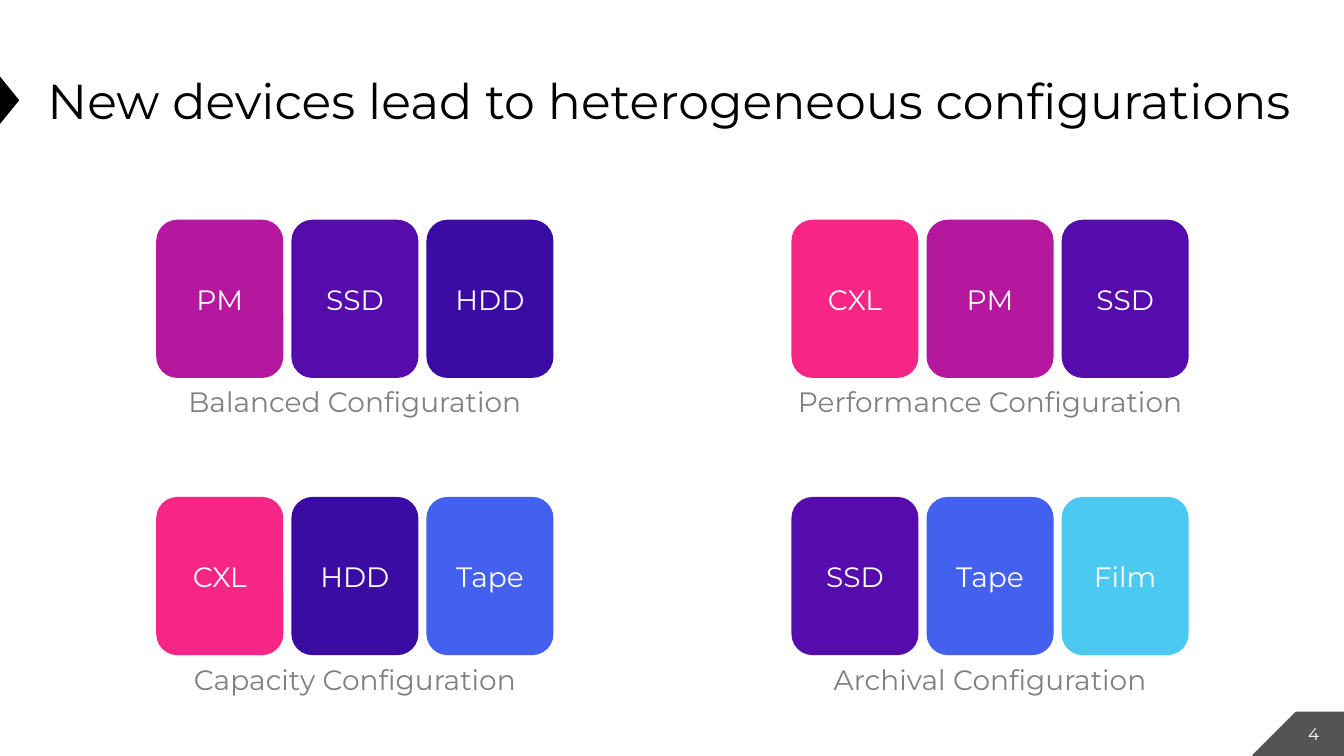
from lxml import etree
from pptx import Presentation
from pptx import util as u
from pptx.dml import color
from pptx.enum import shapes, text
from pptx.oxml import ns

FONT = "Montserrat"
WIDTH, HEIGHT = 13.33, 7.5

# Grid: two columns and two rows of configurations, three tiles in each
LEFT, TOP = 1.55, 2.18
COLUMN_STEP, ROW_STEP = 6.3, 2.75
TILE_WIDTH, TILE_HEIGHT, TILE_STEP = 1.26, 1.57, 1.34
CAPTION_HEIGHT = 0.47

DEVICE_COLOURS = {
    "CXL": "F72585",
    "PM": "B5179E",
    "SSD": "560BAD",
    "HDD": "3A0CA3",
    "Tape": "4361EE",
    "Film": "4CC9F0",
}
CONFIGURATIONS = [
    [("Balanced", ["PM", "SSD", "HDD"]), ("Performance", ["CXL", "PM", "SSD"])],
    [("Capacity", ["CXL", "HDD", "Tape"]), ("Archival", ["SSD", "Tape", "Film"])],
]


def paint(fill, colour):
    fill.solid()
    fill.fore_color.rgb = color.RGBColor.from_string(colour)


def fade(shape, percent):
    """Make every colour of the shape partly transparent."""
    for tone in shape._element.iter(ns.qn("a:srgbClr")):
        etree.SubElement(tone, ns.qn("a:alpha"), val=str(percent * 1000))


def write(shape, words, size, colour, align=text.PP_ALIGN.CENTER, inset=0):
    frame = shape.text_frame
    frame.text = words
    frame.word_wrap = True
    frame.auto_size = text.MSO_AUTO_SIZE.NONE
    frame.vertical_anchor = text.MSO_ANCHOR.MIDDLE
    frame.margin_left = frame.margin_right = u.Inches(inset)
    frame.margin_top = frame.margin_bottom = 0
    para = frame.paragraphs[0]
    para.alignment = align
    para.font.name = FONT
    para.font.size = u.Pt(size)
    paint(para.font.fill, colour)


def add_block(page, kind, place, colour, rotation=0):
    block = page.shapes.add_shape(kind, *map(u.Inches, place))
    block.shadow.inherit = False
    block.line.fill.background()
    block.rotation = rotation
    paint(block.fill, colour)
    return block


def add_label(page, words, place, size, colour):
    box = page.shapes.add_textbox(*map(u.Inches, place))
    write(box, words, size, colour)
    return box


def add_title(page, words):
    title = page.shapes.title
    title.left, title.top, title.width, title.height = map(
        u.Inches, (0.37, 0.6, WIDTH - 0.37, 0.79))
    write(title, words, 35, "000000", text.PP_ALIGN.LEFT, inset=0.1)


def add_decoration(page, number):
    kinds = shapes.MSO_SHAPE
    corner = add_block(page, kinds.RECTANGLE,
                       (WIDTH - 0.91, HEIGHT - 0.44, 0.91, 0.44), "000000")
    fade(corner, 67)
    add_block(page, kinds.RIGHT_TRIANGLE, (12.4, 7.04, 0.47, 0.47), "FFFFFF", 90)
    add_block(page, kinds.ISOSCELES_TRIANGLE, (-0.14, 0.9, 0.47, 0.19), "000000", 90)
    add_label(page, number, (WIDTH - 0.6, HEIGHT - 0.44, 0.6, 0.44), 12, "FFFFFF")


def add_configuration(page, left, top, name, devices):
    for index, device in enumerate(devices):
        place = (left + index * TILE_STEP, top, TILE_WIDTH, TILE_HEIGHT)
        tile = add_block(page, shapes.MSO_SHAPE.ROUNDED_RECTANGLE, place,
                         DEVICE_COLOURS[device])
        write(tile, device, 20, "FFFFFF")
    width = (len(devices) - 1) * TILE_STEP + TILE_WIDTH
    caption = add_label(page, f"{name} Configuration",
                        (left, top + TILE_HEIGHT, width, CAPTION_HEIGHT), 20, "000000")
    fade(caption, 50)


def main():
    deck = Presentation()
    deck.slide_width, deck.slide_height = u.Inches(WIDTH), u.Inches(HEIGHT)
    page = deck.slides.add_slide(deck.slide_layouts[5])

    # Title, page marker and page number
    add_decoration(page, "4")
    add_title(page, "New devices lead to heterogeneous configurations")

    # Device configurations
    for row, configurations in enumerate(CONFIGURATIONS):
        for column, (name, devices) in enumerate(configurations):
            add_configuration(page, LEFT + column * COLUMN_STEP,
                              TOP + row * ROW_STEP, name, devices)

    deck.save("out.pptx")


if __name__ == "__main__":
    main()
